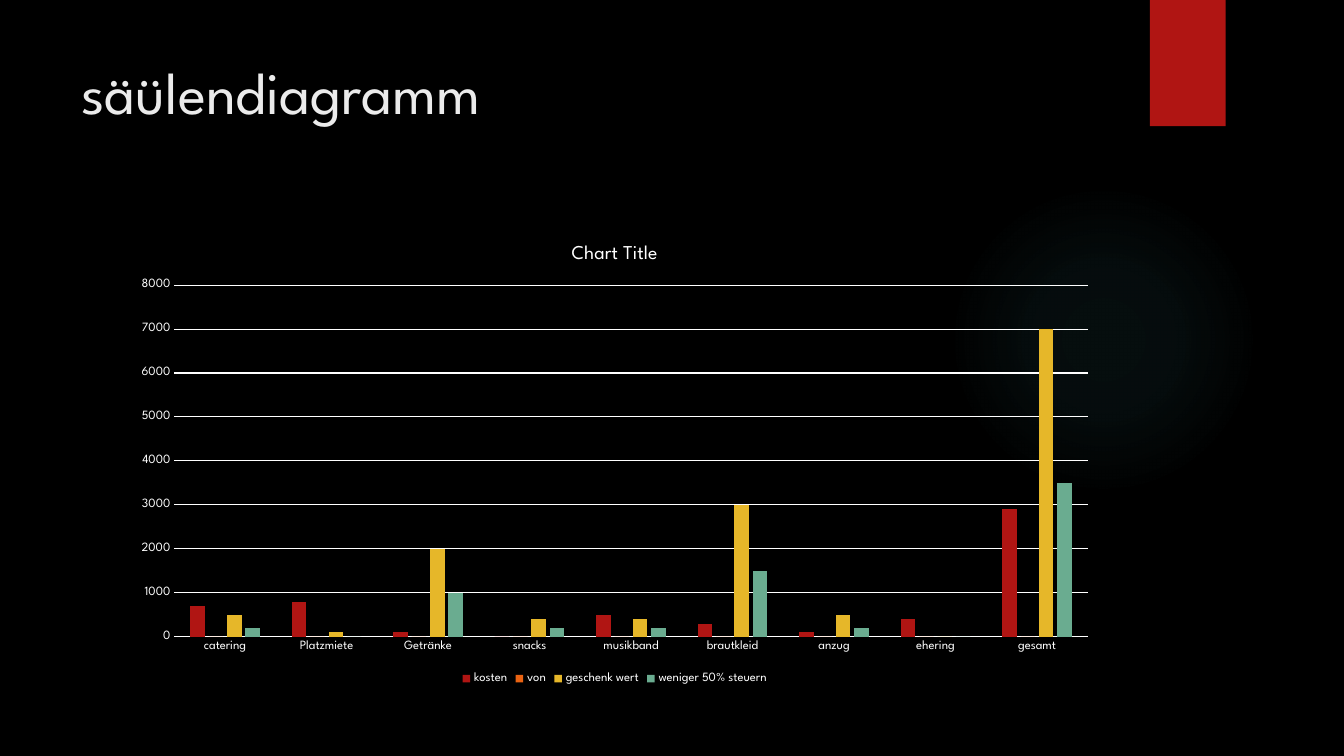
"""Builds the wedding budget slide with its clustered column chart."""
from dataclasses import dataclass

from pptx import Presentation
from pptx.chart.data import CategoryChartData
from pptx.dml.color import RGBColor
from pptx.enum.chart import XL_CHART_TYPE, XL_LEGEND_POSITION, XL_TICK_MARK
from pptx.enum.shapes import MSO_SHAPE
from pptx.enum.text import MSO_ANCHOR, MSO_AUTO_SIZE, PP_ALIGN
from pptx.oxml import parse_xml
from pptx.oxml.ns import nsdecls
from pptx.util import Cm, Pt


@dataclass(frozen=True)
class Theme:
    font: str = "League Spartan"
    background: str = "000000"
    heading: str = "EBEBEB"
    text: str = "FFFFFF"
    accent: str = "B01513"
    glow: str = "50B9C1"
    columns: tuple = ("B01513", "EA6312", "E6B729", "6AAC90")
    title_size: float = 42
    chart_title_size: float = 14
    chart_size: float = 10
    label_size: float = 9
    line_width: float = 0.75


class BudgetSlide:
    def __init__(self, presentation, theme):
        self.theme = theme
        self.slide = presentation.slides.add_slide(presentation.slide_layouts[5])
        self.paint(self.slide.background.fill, theme.background)

    def paint(self, fill, color):
        fill.solid()
        fill.fore_color.rgb = RGBColor.from_string(color)

    def style(self, font, size, color):
        for name, value in {"name": self.theme.font, "size": Pt(size), "bold": False}.items():
            setattr(font, name, value)
        font.color.rgb = RGBColor.from_string(color)

    def rule(self, line):
        line.color.rgb = RGBColor.from_string(self.theme.text)
        line.width = Pt(self.theme.line_width)

    def shape(self, preset, box, color):
        shape = self.slide.shapes.add_shape(preset, *map(Cm, box))
        shape.shadow.inherit = False
        shape.line.fill.background()
        self.paint(shape.fill, color)
        return shape

    def glow(self, box, stops):
        color = self.theme.glow
        halo = self.shape(MSO_SHAPE.OVAL, box, color)
        steps = "".join(
            f'<a:gs pos="{position * 1000}"><a:srgbClr val="{color}">'
            f'<a:alpha val="{alpha * 1000}"/></a:srgbClr></a:gs>'
            for position, alpha in stops
        )
        gradient = parse_xml(
            f'<a:gradFill {nsdecls("a")} rotWithShape="1"><a:gsLst>{steps}</a:gsLst>'
            '<a:path path="circle"><a:fillToRect l="50000" t="50000" r="50000" b="50000"/>'
            "</a:path></a:gradFill>"
        )
        properties = halo.element.spPr
        properties.replace(properties.find("{*}solidFill"), gradient)

    def title(self, box, wording):
        heading = self.slide.shapes.title
        for name, value in zip(("left", "top", "width", "height"), box):
            setattr(heading, name, Cm(value))
        frame = heading.text_frame
        frame.text = wording
        layout = {
            "vertical_anchor": MSO_ANCHOR.TOP,
            "auto_size": MSO_AUTO_SIZE.NONE,
            "word_wrap": True,
        }
        for name, value in layout.items():
            setattr(frame, name, value)
        paragraph = frame.paragraphs[0]
        paragraph.alignment = PP_ALIGN.LEFT
        self.style(paragraph.runs[0].font, self.theme.title_size, self.theme.heading)

    def column_chart(self, box, wording, categories, series):
        theme = self.theme
        budget = CategoryChartData()
        budget.categories = categories
        for name, values in series.items():
            budget.add_series(name, values)
        chart = self.slide.shapes.add_chart(
            XL_CHART_TYPE.COLUMN_CLUSTERED, *map(Cm, box), budget
        ).chart
        self.style(chart.font, theme.chart_size, theme.text)

        chart.has_title = True
        caption = chart.chart_title.text_frame
        caption.text = wording
        self.style(caption.paragraphs[0].runs[0].font, theme.chart_title_size, theme.text)

        chart.has_legend = True
        chart.legend.position = XL_LEGEND_POSITION.BOTTOM
        chart.legend.include_in_layout = False
        self.style(chart.legend.font, theme.label_size, theme.text)

        for axis in (chart.category_axis, chart.value_axis):
            axis.major_tick_mark = axis.minor_tick_mark = XL_TICK_MARK.NONE
            self.style(axis.tick_labels.font, theme.label_size, theme.text)
        self.rule(chart.category_axis.format.line)
        amounts = chart.value_axis
        scale = {"minimum_scale": 0, "maximum_scale": 8000, "major_unit": 1000}
        for name, value in scale.items():
            setattr(amounts, name, value)
        amounts.format.line.fill.background()
        self.rule(amounts.major_gridlines.format.line)

        plot = chart.plots[0]
        for name, value in {"gap_width": 219, "overlap": -27, "vary_by_categories": False}.items():
            setattr(plot, name, value)
        for columns, color in zip(plot.series, theme.columns):
            self.paint(columns.format.fill, color)


def main():
    presentation = Presentation()
    presentation.slide_width, presentation.slide_height = Cm(33.87), Cm(19.05)
    theme = Theme()
    page = BudgetSlide(presentation, theme)
    page.glow((23.9, 4.65, 7.82, 7.82), ((0, 7), (36, 6), (69, 0)))
    page.shape(MSO_SHAPE.RECTANGLE, (28.98, 0, 1.91, 3.18), theme.accent)
    page.title((1.8, 1.27, 26.14, 3.89), "säülendiagramm")
    page.column_chart(
        (3.07, 5.69, 24.84, 11.66),
        "Chart Title",
        ("catering", "Platzmiete", "Getränke", "snacks", "musikband",
         "brautkleid", "anzug", "ehering", "gesamt"),
        {
            "kosten": (700, 800, 100, 0, 500, 300, 100, 400, 2900),
            "von": (0,) * 9,
            "geschenk wert": (500, 100, 2000, 400, 400, 3000, 500, 0, 7000),
            "weniger 50% steuern": (200, 0, 1000, 200, 200, 1500, 200, 0, 3500),
        },
    )
    presentation.save("out.pptx")


if __name__ == "__main__":
    main()
